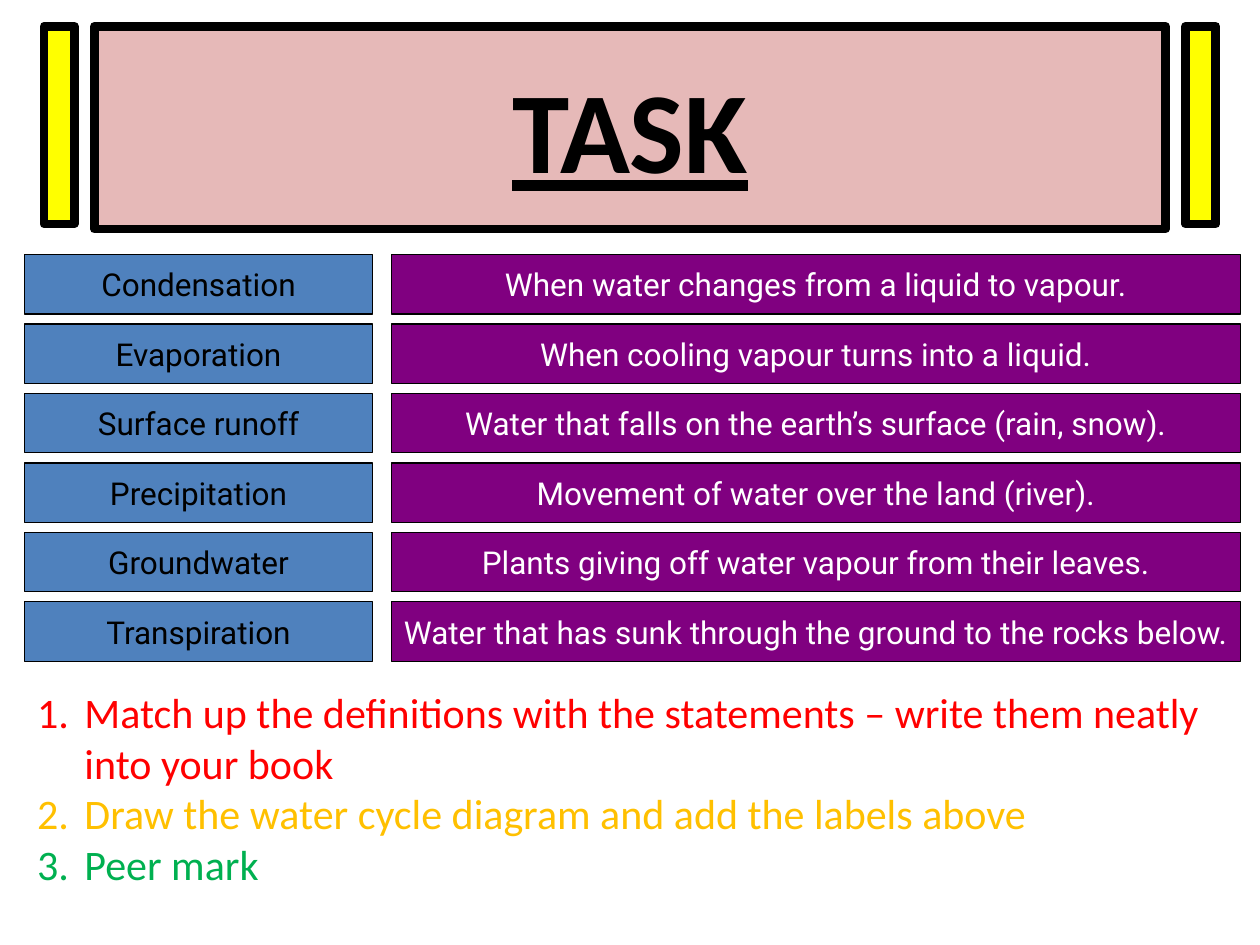
from lxml.etree import SubElement as Sub
from pptx import Presentation
from pptx.dml.color import RGBColor as RGB
from pptx.enum.shapes import MSO_SHAPE as Kind
from pptx.enum.text import MSO_ANCHOR as Anchor, PP_ALIGN as Align
from pptx.oxml.ns import qn
from pptx.util import Pt

BLACK = RGB(0, 0, 0)
WHITE = RGB(255, 255, 255)
PINK = RGB(0xE6, 0xB9, 0xB8)
YELLOW = RGB(255, 255, 0)
BLUE = RGB(0x4F, 0x81, 0xBD)
PURPLE = RGB(0x80, 0, 0x80)
RED = RGB(255, 0, 0)
AMBER = RGB(0xFF, 0xC0, 0)
GREEN = RGB(0, 0xB0, 0x50)

PAIRS = [
    ("Condensation", "When water changes from a liquid to vapour."),
    ("Evaporation", "When cooling vapour turns into a liquid."),
    ("Surface runoff", "Water that falls on the earth’s surface (rain, snow)."),
    ("Precipitation", "Movement of water over the land (river)."),
    ("Groundwater", "Plants giving off water vapour from their leaves."),
    ("Transpiration", "Water that has sunk through the ground to the rocks below."),
]
STEPS = [
    ("Match up the definitions with the statements – write them neatly into your book", RED),
    ("Draw the water cycle diagram and add the labels above", AMBER),
    ("Peer mark", GREEN),
]
ROW_TOP, ROW_STEP, ROW_HIGH = 145.4, 39.7, 34
INDENT = Pt(27)


def add_box(slide, area, fill, line):
    box = slide.shapes.add_shape(Kind.RECTANGLE, *map(Pt, area))
    box.shadow.inherit = False
    box.fill.solid()
    box.fill.fore_color.rgb = fill
    box.line.color.rgb = BLACK
    box.line.width = Pt(line)
    return box


def set_font(para, name, size, color):
    font = para.font
    font.name, font.size = name, Pt(size)
    font.color.rgb = color


def add_label(box, text, name, size, color, wrap):
    """Centre one line of text in the box."""
    frame = box.text_frame
    frame.word_wrap = wrap
    frame.vertical_anchor = Anchor.MIDDLE
    para = frame.paragraphs[0]
    para.text = text
    para.alignment = Align.CENTER
    set_font(para, name, size, color)
    return para


def add_title(slide):
    for left in (25.2, 677.5):
        add_box(slide, (left, 15, 17.3, 113), YELLOW, 5)
    box = add_box(slide, (54, 15, 612, 116), PINK, 5)
    font = add_label(box, "TASK", "Calibri", 66, BLACK, True).font
    font.bold = font.underline = True


def add_rows(slide):
    columns = [(14.2, 198.5, BLUE, BLACK), (223.7, 485, PURPLE, WHITE)]
    for row, pair in enumerate(PAIRS):
        top = ROW_TOP + row * ROW_STEP
        for text, (left, width, fill, color) in zip(pair, columns):
            box = add_box(slide, (left, top, width, ROW_HIGH), fill, 0.75)
            add_label(box, text, "Roboto", 18, color, False)


def add_steps(slide):
    frame = slide.shapes.add_textbox(Pt(14.2), Pt(389), Pt(695), Pt(124)).text_frame
    frame.word_wrap = True
    for i, (text, color) in enumerate(STEPS):
        para = frame.add_paragraph() if i else frame.paragraphs[0]
        para.text = text
        set_font(para, "Calibri", 24, color)
        add_number(para)


def add_number(para):
    """Give the paragraph automatic numbering with a hanging indent."""
    props = para._p.get_or_add_pPr()
    props.set("marL", str(INDENT))
    props.set("indent", str(-INDENT))
    mark = Sub(props, qn("a:buAutoNum"), type="arabicPeriod")
    props.find(qn("a:defRPr")).addprevious(mark)


def main():
    deck = Presentation()
    deck.slide_width, deck.slide_height = Pt(720), Pt(540)
    slide = deck.slides.add_slide(deck.slide_layouts[6])
    add_title(slide)
    add_rows(slide)
    add_steps(slide)
    deck.save("out.pptx")


if __name__ == "__main__":
    main()
